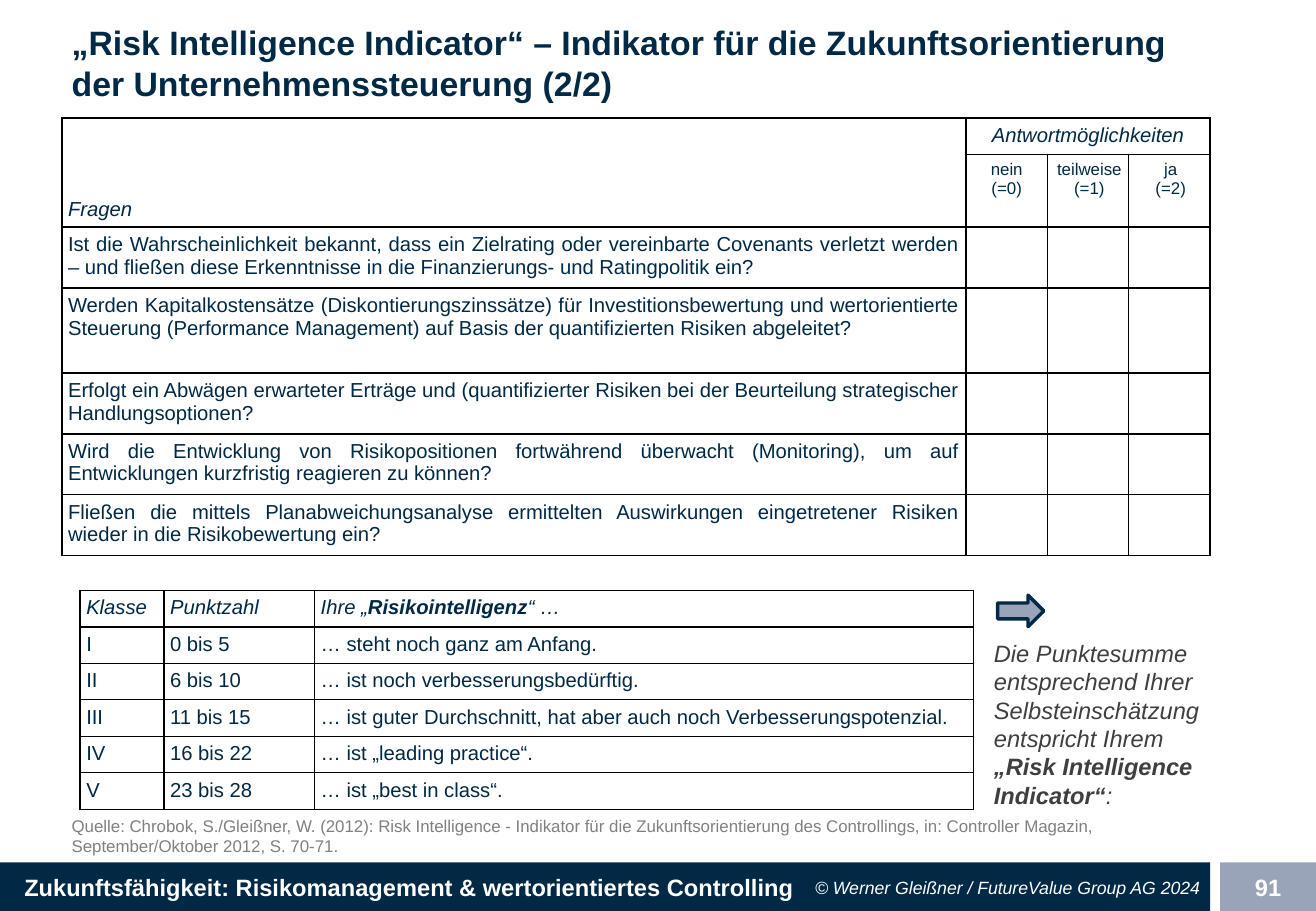
from dataclasses import dataclass

from lxml.etree import SubElement
from pptx import Presentation
from pptx.dml.color import RGBColor
from pptx.enum.shapes import MSO_SHAPE as Preset
from pptx.enum.text import MSO_ANCHOR as Anchor, PP_ALIGN as Align
from pptx.oxml import parse_xml
from pptx.oxml.ns import nsdecls, qn
from pptx.util import Inches, Pt


@dataclass(frozen=True)
class Theme:
    font: str = "Arial"
    navy: str = "002945"
    steel: str = "99A4B9"
    white: str = "FFFFFF"
    black: str = "000000"
    grey: str = "808080"
    charcoal: str = "3F3F3F"
    title: float = 20
    lead: float = 14
    body: float = 12
    fine: float = 10.5
    small: float = 10


THEME = Theme()

QUESTIONS = [
    "Ist die Wahrscheinlichkeit bekannt, dass ein Zielrating oder vereinbarte Covenants "
    "verletzt werden – und fließen diese Erkenntnisse in die Finanzierungs- und "
    "Ratingpolitik ein?",
    "Werden Kapitalkostensätze (Diskontierungszinssätze) für Investitionsbewertung und "
    "wertorientierte Steuerung (Performance Management) auf Basis der quantifizierten "
    "Risiken abgeleitet?",
    "Erfolgt ein Abwägen erwarteter Erträge und (quantifizierter Risiken bei der "
    "Beurteilung strategischer Handlungsoptionen?",
    "Wird die Entwicklung von Risikopositionen fortwährend überwacht (Monitoring), um auf "
    "Entwicklungen kurzfristig reagieren zu können?",
    "Fließen die mittels Planabweichungsanalyse ermittelten Auswirkungen eingetretener "
    "Risiken wieder in die Risikobewertung ein?",
]
ANSWERS = ["nein\n(=0)", "teilweise\n(=1)", "ja\n(=2)"]
CLASSES = [
    ("I", "0 bis 5", "… steht noch ganz am Anfang."),
    ("II", "6 bis 10", "… ist noch verbesserungsbedürftig."),
    ("III", "11 bis 15", "… ist guter Durchschnitt, hat aber auch noch Verbesserungspotenzial."),
    ("IV", "16 bis 22", "… ist „leading practice“."),
    ("V", "23 bis 28", "… ist „best in class“."),
]


def write(frame, text, size=THEME.body, color=THEME.navy, bold=False, italic=False,
          align=Align.LEFT, after=0):
    """Fill one paragraph; every second part of a list of strings is bold."""
    para = frame.paragraphs[0]
    para.alignment = align
    para.space_after = Pt(after)
    parts = [text] if isinstance(text, str) else text
    for index, part in enumerate(parts):
        for number, line in enumerate(part.split("\n")):
            if number:
                para.add_line_break()
            span = para.add_run()
            span.text = line
            span.font.name = THEME.font
            span.font.size = Pt(size)
            span.font.bold = bold or index % 2 == 1
            span.font.italic = italic
            span.font.color.rgb = RGBColor.from_string(color)


def set_frame(frame, anchor=Anchor.MIDDLE, side=0.08, edge=0.04, wrap=True):
    frame.word_wrap = wrap
    frame.vertical_anchor = anchor
    frame.margin_left = frame.margin_right = Inches(side)
    frame.margin_top = frame.margin_bottom = Inches(edge)


def add_text(page, box, text, anchor=Anchor.MIDDLE, edge=0.04, **format):
    frame = page.shapes.add_textbox(*map(Inches, box)).text_frame
    set_frame(frame, anchor, edge=edge)
    write(frame, text, **format)


def add_block(page, preset, box, fill, line=None):
    block = page.shapes.add_shape(preset, *map(Inches, box))
    block.shadow.inherit = False
    block.fill.solid()
    block.fill.fore_color.rgb = RGBColor.from_string(fill)
    if line:
        block.line.color.rgb = RGBColor.from_string(line)
        block.line.width = Pt(2)
    else:
        block.line.fill.background()
    return block


def add_grid(page, box, columns, rows):
    """Add a plain table with thin black borders and no fill."""
    table = page.shapes.add_table(len(rows), len(columns), *map(Inches, box)).table
    table.first_row = table.horz_banding = False
    for column, width in zip(table.columns, columns):
        column.width = Inches(width)
    for row, height in zip(table.rows, rows):
        row.height = Inches(height)
    for cell in table.iter_cells():
        cell.margin_left = cell.margin_right = Inches(0.05)
        cell.margin_top = cell.margin_bottom = Inches(0.05)
        cell.fill.background()
        properties = cell._tc.get_or_add_tcPr()
        for index, side in enumerate(("lnL", "lnR", "lnT", "lnB")):
            border = parse_xml(f'<a:{side} {nsdecls("a")} w="{Pt(1)}"/>')
            fill = SubElement(border, qn("a:solidFill"))
            SubElement(fill, qn("a:srgbClr"), val=THEME.black)
            properties.insert(index, border)
    return table


def write_cell(cell, text, align=Align.JUSTIFY, **format):
    write(cell.text_frame, text, align=align, after=6, **format)


def add_questions(page, box):
    answer_width = 0.67
    columns = [box[2] - 3 * answer_width] + [answer_width] * 3
    table = add_grid(page, box, columns, [0.3, 0.6, 0.5, 0.7, 0.5, 0.5, 0.5])

    # Two-level header
    table.cell(0, 0).merge(table.cell(1, 0))
    table.cell(0, 1).merge(table.cell(0, 3))
    table.cell(0, 0).vertical_anchor = Anchor.BOTTOM
    write_cell(table.cell(0, 0), "Fragen", italic=True)
    write_cell(table.cell(0, 1), "Antwortmöglichkeiten", Align.CENTER, italic=True)
    for column, answer in enumerate(ANSWERS, 1):
        cell = table.cell(1, column)
        write_cell(cell, answer, Align.CENTER, size=THEME.small)
        if column > 1:
            cell.text_frame.paragraphs[0]._p.get_or_add_pPr().set("marL", str(Inches(0.02)))

    for row, question in enumerate(QUESTIONS, 2):
        write_cell(table.cell(row, 0), question)


def add_classes(page, box):
    header = ("Klasse", "Punktzahl", ["Ihre „", "Risikointelligenz", "“ …"])
    lines = [header] + CLASSES
    table = add_grid(page, box, [0.69, 1.24, 5.42], [box[3] / len(lines)] * len(lines))
    for row, line in enumerate(lines):
        for column, text in enumerate(line):
            write_cell(table.cell(row, column), text, italic=row == 0)


def add_result(page, box):
    left, top, width, height = box
    add_block(page, Preset.RIGHT_ARROW, (left + 0.11, top, 0.38, 0.26),
              THEME.steel, line=THEME.navy)
    add_text(page, (left, top + 0.37, width, height - 0.37),
             ["Die Punktesumme entsprechend Ihrer Selbsteinschätzung entspricht Ihrem ",
              "„Risk Intelligence Indicator“", ":"],
             edge=0.08, size=THEME.lead, color=THEME.charcoal, italic=True)


def add_footer(page, box):
    left, top, width, height = box
    bar_width, number_width, notice_width = 9.96, 0.79, 4.33
    bar = add_block(page, Preset.RECTANGLE, (left, top, bar_width, height), THEME.navy)
    set_frame(bar.text_frame, wrap=False)
    bar.text_frame.margin_left = Inches(0.2)
    write(bar.text_frame, "Zukunftsfähigkeit: Risikomanagement & wertorientiertes Controlling",
          size=THEME.lead, color=THEME.white, bold=True)

    number = add_block(page, Preset.RECTANGLE,
                       (left + width - number_width, top, number_width, height), THEME.steel)
    set_frame(number.text_frame)
    write(number.text_frame, "91", size=THEME.lead, color=THEME.white, bold=True,
          align=Align.CENTER)

    add_text(page, (left + bar_width - notice_width, top, notice_width, height),
             "© Werner Gleißner / FutureValue Group AG 2024",
             size=THEME.fine, color=THEME.white, italic=True, align=Align.RIGHT)


def main():
    deck = Presentation()
    deck.slide_width, deck.slide_height = Inches(10.83), Inches(7.5)
    page = deck.slides.add_slide(deck.slide_layouts[6])

    add_footer(page, (0, 7.1, 10.83, 0.41))
    # Title and source
    add_text(page, (0.51, 0.16, 9.45, 0.71),
             "„Risk Intelligence Indicator“ – Indikator für die Zukunftsorientierung "
             "der Unternehmenssteuerung (2/2)", size=THEME.title, bold=True)
    add_text(page, (0.51, 5.91, 9.45, 1.18),
             "Quelle: Chrobok, S./Gleißner, W. (2012): Risk Intelligence - Indikator für die "
             "Zukunftsorientierung des Controllings, in: Controller Magazin, "
             "September/Oktober 2012, S. 70-71.",
             anchor=Anchor.BOTTOM, size=THEME.small, color=THEME.grey, after=3)
    # Questionnaire and scoring
    add_questions(page, (0.51, 0.97, 9.45, 3.6))
    add_classes(page, (0.66, 4.86, 7.35, 1.8))
    add_result(page, (8.1, 4.9, 1.9, 1.75))

    deck.save("out.pptx")


if __name__ == "__main__":
    main()
